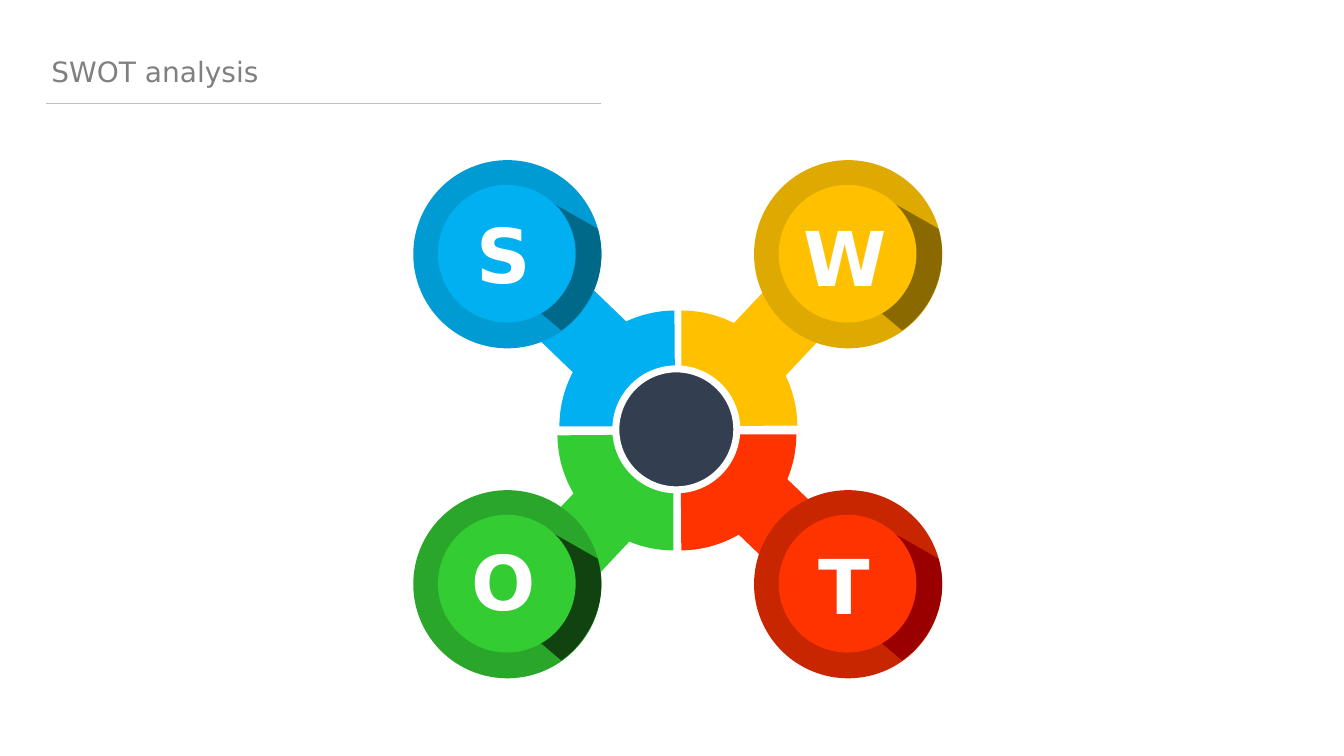
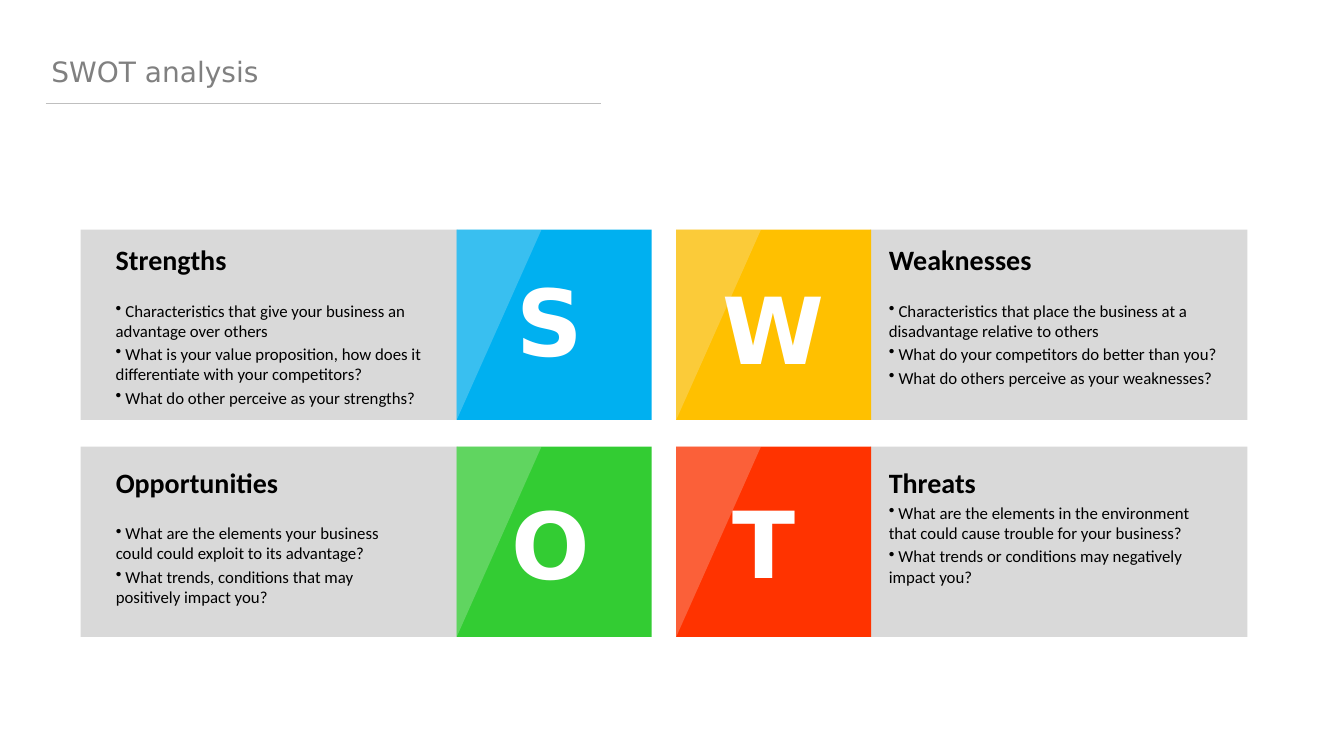
from typing import NamedTuple

from lxml.etree import SubElement
from pptx import Presentation
from pptx.dml.color import RGBColor
from pptx.enum.shapes import MSO_CONNECTOR, MSO_SHAPE
from pptx.enum.text import MSO_ANCHOR, MSO_AUTO_SIZE, PP_ALIGN
from pptx.oxml.ns import qn
from pptx.util import Pt

# Colours and fonts
WHITE = RGBColor(0xFF, 0xFF, 0xFF)
BLACK = RGBColor(0x00, 0x00, 0x00)
TITLE_GRAY = RGBColor(0x80, 0x80, 0x80)
RULE_GRAY = RGBColor(0xBF, 0xBF, 0xBF)
PANEL_GRAY = RGBColor(0xD9, 0xD9, 0xD9)
SHEEN = RGBColor(0xF2, 0xF2, 0xF2)
HUB_NAVY = RGBColor(0x33, 0x3F, 0x50)
BLUE = RGBColor(0x00, 0xB0, 0xF0)
BLUE_RIM = RGBColor(0x00, 0x9B, 0xD2)
BLUE_SHADE = RGBColor(0x00, 0x69, 0x8A)
YELLOW = RGBColor(0xFF, 0xC0, 0x00)
YELLOW_RIM = RGBColor(0xDE, 0xA9, 0x00)
YELLOW_SHADE = RGBColor(0x8A, 0x69, 0x00)
GREEN = RGBColor(0x33, 0xCC, 0x33)
GREEN_RIM = RGBColor(0x2A, 0xA6, 0x2A)
GREEN_SHADE = RGBColor(0x11, 0x43, 0x11)
RED = RGBColor(0xFF, 0x33, 0x00)
RED_RIM = RGBColor(0xC8, 0x26, 0x00)
RED_SHADE = RGBColor(0x9A, 0x00, 0x00)
DISPLAY_FONT = "DejaVu Sans"
BODY_FONT = "Calibri"

# Column and row positions, in points
DISC_LEFTS, DISC_TOPS = (295.2, 538.6), (114.4, 350.1)
DISC_SIZE, RIM, FACE_SIZE = 134.4, 17.6, 98.4
TILE_LEFTS, TILE_TOPS = (326.2, 483), (164, 319)
TILE_WIDTH, TILE_HEIGHT, SHEEN_WIDTH = 139.2, 136, 60.6
PANEL_LEFTS, PANEL_WIDTH = (57.6, 621.6), 269.4
BODY_LEFTS, BODY_TOPS = (75.6, 627.8), (169.9, 329)

# Long shadow on a disc, measured from the disc's corner
SHADE_CURVE = ((131.8, 49), (139.7, 76.3), (128.9, 105.1), (105.8, 121.7))
SHADE_CORNERS = [(54, 77.8), (100.1, 31)]


class Quadrant(NamedTuple):
    letter: str
    column: int
    row: int
    color: RGBColor
    rim: RGBColor
    shade: RGBColor
    arc: tuple  # left, top, rotation
    arm: tuple  # left, top, height, rotation
    disc_letter: tuple  # left, top
    tile_letter: tuple  # left, top, width
    tile_align: PP_ALIGN
    heading: str
    heading_gap: float
    body_size: tuple
    bullets: tuple


STRENGTHS = Quadrant(
    "S", 0, 0, BLUE, BLUE_RIM, BLUE_SHADE,
    (399.6, 221.8, 0), (391, 206.6, 61.2, 313.9),
    (333.4, 144.7), (362.2, 185, 93.6), PP_ALIGN.LEFT,
    "Strengths", 14.6, (239.8, 127.4),
    ("Characteristics that give your business an advantage over others",
     "What is your value proposition, how does it differentiate with your competitors?",
     "What do other perceive as your strengths?"))
WEAKNESSES = Quadrant(
    "W", 1, 0, YELLOW, YELLOW_RIM, YELLOW_SHADE,
    (403.9, 221.8, 90), (527, 205.9, 64.8, 43.3),
    (566.6, 146.9), (509, 190.8, 93.6), PP_ALIGN.LEFT,
    "Weaknesses", 14.6, (257.8, 113),
    ("Characteristics that place the business at a disadvantage relative to others",
     "What do your competitors do better than you?",
     "What do others perceive as your weaknesses?"))
THREATS = Quadrant(
    "T", 1, 1, RED, RED_RIM, RED_SHADE,
    (403.2, 227.5, 180), (525.6, 337.7, 61.9, 313.9),
    (577.4, 381.6), (516.2, 343.4, 74.9), PP_ALIGN.LEFT,
    "Threats", 0, (244.8, 95.8),
    ("What are the elements in the environment that could cause trouble for your business?",
     "What trends or conditions may negatively impact you?"))
OPPORTUNITIES = Quadrant(
    "O", 0, 1, GREEN, GREEN_RIM, GREEN_SHADE,
    (398.2, 227.5, 270), (399.6, 339.1, 69.1, 43.3),
    (329.8, 378.7), (346.3, 344.2, 93.6), PP_ALIGN.CENTER,
    "Opportunities", 14.6, (221.8, 127.4),
    ("What are the elements your business could could exploit to its advantage?",
     "What trends, conditions that may positively impact you?"))
QUADRANTS = (STRENGTHS, WEAKNESSES, THREATS, OPPORTUNITIES)


# Basic elements
def paint(shape, color):
    shape.shadow.inherit = False
    shape.fill.solid()
    shape.fill.fore_color.rgb = color
    shape.line.fill.background()
    return shape


def add_block(page, kind, left, top, width, height, color, rotation=0):
    shape = page.shapes.add_shape(kind, Pt(left), Pt(top), Pt(width), Pt(height))
    shape.rotation = rotation
    return paint(shape, color)


def add_outline(page, points, color):
    corners = [(Pt(x), Pt(y)) for x, y in points]
    builder = page.shapes.build_freeform(*corners[0])
    builder.add_line_segments(corners[1:], close=True)
    return paint(builder.convert_to_shape(), color)


def set_font(para, name, size, color, bold=False):
    para.font.name = name
    para.font.size = Pt(size)
    para.font.color.rgb = color
    para.font.bold = bold


def add_text_box(page, left, top, width, height):
    box = page.shapes.add_textbox(Pt(left), Pt(top), Pt(width), Pt(height))
    box.text_frame.word_wrap = True
    return box.text_frame


def add_letter(page, letter, left, top, width, height, size, align=PP_ALIGN.LEFT):
    para = add_text_box(page, left, top, width, height).paragraphs[0]
    para.text = letter
    para.alignment = align
    set_font(para, DISPLAY_FONT, size, WHITE, bold=True)


def add_bullet(frame, text):
    para = frame.add_paragraph()
    para.text = f" {text}"
    para.space_before = Pt(2.4)
    set_font(para, BODY_FONT, 12, BLACK)
    properties = para._p.get_or_add_pPr()
    properties.set("marL", "0")
    properties.set("indent", "0")
    SubElement(properties, qn("a:buChar")).set("char", "•")
    # Bullet mark must come before the default run properties
    default_font = properties.find(qn("a:defRPr"))
    if default_font is not None:
        properties.append(default_font)


# Shared page frame
def add_page(deck):
    page = deck.slides.add_slide(deck.slide_layouts[5])
    title = page.shapes.title
    title.left, title.top, title.width, title.height = (
        Pt(29.5), Pt(35.3), Pt(402.5), Pt(31.7))
    frame = title.text_frame
    frame.text = "SWOT analysis"
    frame.word_wrap = True
    frame.auto_size = MSO_AUTO_SIZE.NONE
    frame.vertical_anchor = MSO_ANCHOR.TOP
    frame.paragraphs[0].alignment = PP_ALIGN.LEFT
    set_font(frame.paragraphs[0], DISPLAY_FONT, 20, TITLE_GRAY)

    rule = page.shapes.add_connector(
        MSO_CONNECTOR.STRAIGHT, Pt(32.7), Pt(73.6), Pt(429.2), Pt(73.6))
    rule.line.color.rgb = RULE_GRAY
    rule.line.width = Pt(0.5)
    SubElement(rule._element.spPr, qn("a:effectLst"))
    return page


# Wheel slide
def curve_points(start, pull_out, pull_in, end, steps=16):
    points = []
    for step in range(steps + 1):
        t = step / steps
        weights = ((1 - t) ** 3, 3 * t * (1 - t) ** 2, 3 * t ** 2 * (1 - t), t ** 3)
        points.append(tuple(
            sum(weight * value for weight, value in zip(weights, values))
            for values in zip(start, pull_out, pull_in, end)))
    return points


def add_ring_segment(page, quadrant):
    left, top, rotation = quadrant.arc
    arc = add_block(page, MSO_SHAPE.BLOCK_ARC, left, top, 165.6, 165.6,
                    quadrant.color, rotation)
    for index, value in enumerate((108, 161.73, 0.26)):
        arc.adjustments[index] = value


def add_arm(page, quadrant):
    left, top, height, rotation = quadrant.arm
    add_block(page, MSO_SHAPE.RECTANGLE, left, top, 52.6, height,
              quadrant.color, rotation)


def add_disc(page, quadrant):
    left, top = DISC_LEFTS[quadrant.column], DISC_TOPS[quadrant.row]
    add_block(page, MSO_SHAPE.OVAL, left, top, DISC_SIZE, DISC_SIZE, quadrant.rim)
    shade = curve_points(*SHADE_CURVE) + SHADE_CORNERS
    add_outline(page, [(left + x, top + y) for x, y in shade], quadrant.shade)
    add_block(page, MSO_SHAPE.OVAL, left + RIM, top + RIM, FACE_SIZE, FACE_SIZE,
              quadrant.color)
    add_letter(page, quadrant.letter, *quadrant.disc_letter, 64.8, 72.7, 54)


def build_wheel(deck):
    page = add_page(deck)
    for quadrant in QUADRANTS:
        add_ring_segment(page, quadrant)
    hub = add_block(page, MSO_SHAPE.OVAL, 439.9, 263.5, 86.4, 86.4, HUB_NAVY)
    hub.line.color.rgb = WHITE
    hub.line.width = Pt(5)
    for quadrant in QUADRANTS:
        add_arm(page, quadrant)
    for quadrant in QUADRANTS:
        add_disc(page, quadrant)


# Detail slide
def add_panel(page, quadrant):
    column, row = quadrant.column, quadrant.row
    add_block(page, MSO_SHAPE.RECTANGLE, PANEL_LEFTS[column], TILE_TOPS[row],
              PANEL_WIDTH, TILE_HEIGHT, PANEL_GRAY)
    frame = add_text_box(page, BODY_LEFTS[column], BODY_TOPS[row], *quadrant.body_size)
    heading = frame.paragraphs[0]
    heading.text = quadrant.heading
    heading.space_after = Pt(quadrant.heading_gap)
    set_font(heading, BODY_FONT, 20, BLACK, bold=True)
    for text in quadrant.bullets:
        add_bullet(frame, text)


def add_tile(page, quadrant):
    left, top = TILE_LEFTS[quadrant.column], TILE_TOPS[quadrant.row]
    add_block(page, MSO_SHAPE.RECTANGLE, left, top, TILE_WIDTH, TILE_HEIGHT,
              quadrant.color)
    add_letter(page, quadrant.letter, *quadrant.tile_letter, 87.1, 66,
               quadrant.tile_align)
    corners = [(left, top), (left + SHEEN_WIDTH, top), (left, top + TILE_HEIGHT)]
    sheen = add_outline(page, corners, SHEEN)
    color = sheen._element.spPr.find(f"{qn('a:solidFill')}/{qn('a:srgbClr')}")
    SubElement(color, qn("a:alpha")).set("val", "24000")


def build_details(deck):
    page = add_page(deck)
    for quadrant in QUADRANTS:
        add_panel(page, quadrant)
    for quadrant in QUADRANTS:
        add_tile(page, quadrant)


def main():
    deck = Presentation()
    deck.slide_width, deck.slide_height = Pt(960), Pt(540)
    build_wheel(deck)
    build_details(deck)
    deck.save("out.pptx")


if __name__ == "__main__":
    main()
